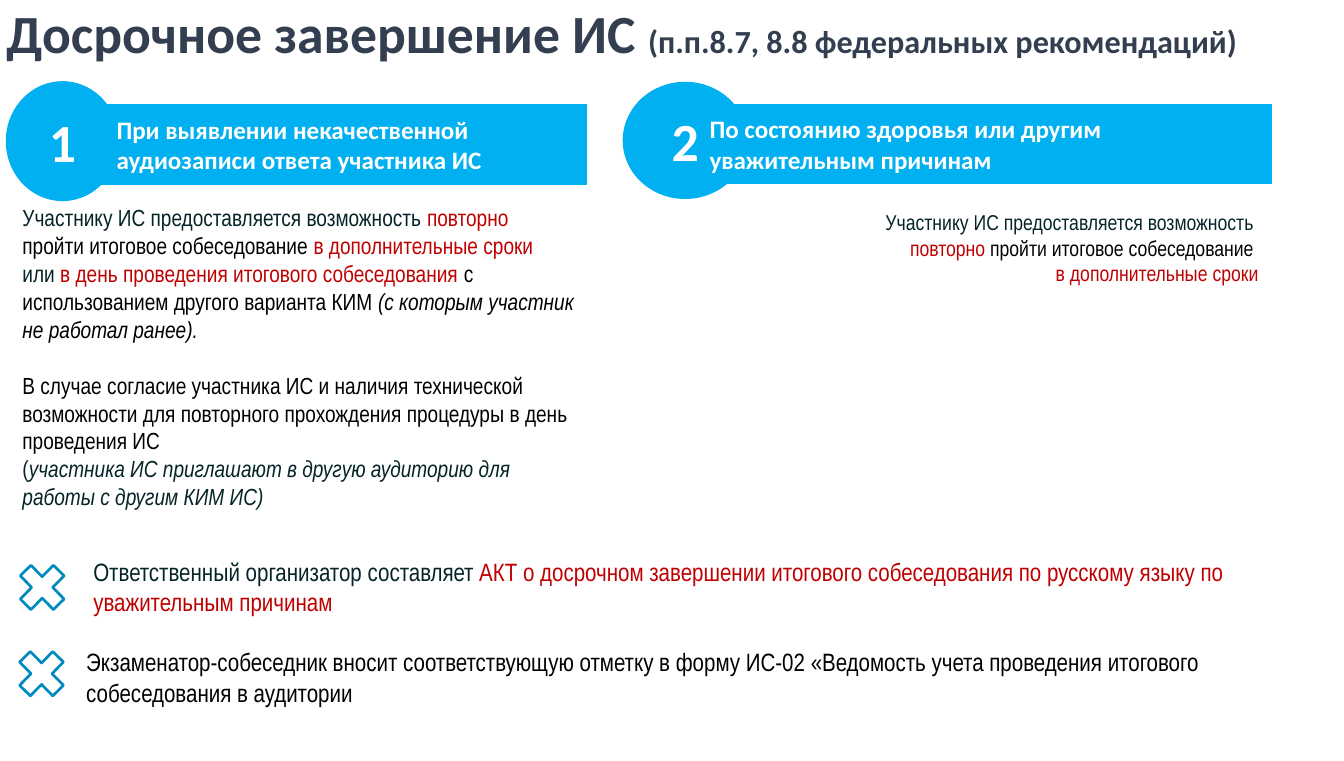
import pptx
import pptx.util
import pptx.dml.color
import pptx.enum.shapes
import pptx.enum.text

Pt = pptx.util.Pt
Kind = pptx.enum.shapes.MSO_SHAPE
Align = pptx.enum.text.PP_ALIGN
Anchor = pptx.enum.text.MSO_ANCHOR

HUES = {"sky": "00B0F0", "edge": "018ABE", "navy": "333F50", "dark": "052427",
        "black": "000000", "red": "C00000", "white": "FFFFFF"}


def tint(name):
    """Return the named colour."""
    return pptx.dml.color.RGBColor.from_string(HUES[name])


def write(shape, lines, font="Arial Narrow", size=28, hue="black", bold=False,
          align=Align.LEFT, anchor=Anchor.TOP, inset=7.2, gaps=None):
    """Fill a shape with lines, each a list of (text, overrides) runs."""
    frame = shape.text_frame
    frame.word_wrap = True
    frame.vertical_anchor = anchor
    frame.margin_left = Pt(inset)
    for i, line in enumerate(lines):
        para = frame.paragraphs[0] if i == 0 else frame.add_paragraph()
        para.alignment = align
        para.space_before = Pt((gaps or {}).get(i, 0))
        for text, form in line:
            run = para.add_run()
            run.text = text
            run.font.name = font
            run.font.size = Pt(form.get("size", size))
            run.font.bold = bold
            run.font.italic = form.get("italic", False)
            run.font.color.rgb = tint(form.get("hue", hue))


def label(slide, box, lines, **form):
    """Add a text box."""
    write(slide.shapes.add_textbox(*map(Pt, box)), lines, **form)


def draw(slide, kind, box, fill=None, line=None, width=1):
    """Add a flat preset shape."""
    shape = slide.shapes.add_shape(kind, *map(Pt, box))
    shape.shadow.inherit = False
    if fill:
        shape.fill.solid()
        shape.fill.fore_color.rgb = tint(fill)
    else:
        shape.fill.background()
    if line:
        shape.line.color.rgb = tint(line)
        shape.line.width = Pt(width)
    else:
        shape.line.fill.background()
    return shape


def banner(slide, box, disc, high, digit, lines, inset):
    """Draw a numbered disc with a heading bar running to the right."""
    left, top, width, height = box
    form = dict(font="Calibri", hue="white", bold=True, anchor=Anchor.MIDDLE)
    spot = draw(slide, Kind.OVAL, (left, top, disc, height), "sky")
    write(spot, [[(digit, {})]], size=60, align=Align.CENTER, **form)
    bar = draw(slide, Kind.RECTANGLE,
               (left + 90, top + (height - high) / 2 + 4, width - 90, high), "sky", "sky")
    write(bar, lines, inset=inset, **form)


def note(slide, box, shift, drop, runs):
    """Draw a cross with a remark beside it."""
    left, top, width, height = box
    draw(slide, Kind.MATH_MULTIPLY, (left, top, 71.3, height), line="edge", width=3)
    label(slide, (left + shift, top + drop, width - shift, 75), [runs])


def title(slide, box):
    """Write the slide heading."""
    label(slide, box, [[("Досрочное завершение ИС ", {}),
                        ("(п.п.8.7, 8.8 федеральных рекомендаций)", {"size": 36})]],
          font="Calibri", size=60, hue="navy", bold=True)


def retake(slide, box):
    """Write the text for a poor recording."""
    dark, red, tilt = {"hue": "dark"}, {"hue": "red"}, {"italic": True}
    both = dark | tilt
    label(slide, box, [
        [("Участнику ИС предоставляется возможность ", dark), ("повторно", red)],
        [("пройти итоговое собеседование ", {}), ("в дополнительные сроки", red)],
        [("или ", dark), ("в день проведения итогового собеседования ", red),
         ("с использованием другого варианта КИМ ", {}), ("(с которым участник", tilt)],
        [("не работал ранее).", tilt)],
        [("В случае согласие участника ИС и наличия технической возможности для "
          "повторного прохождения процедуры в день проведения ИС", {})],
        [("(", dark), ("участника ИС приглашают в другую аудиторию для", both)],
        [("работы с другим КИМ ИС)", both)],
    ], size=26, gaps={4: 31})


def health(slide, box):
    """Write the text for health reasons."""
    label(slide, box, [
        [("Участнику ИС предоставляется возможность ", {"hue": "dark"})],
        [("повторно ", {"hue": "red"}), ("пройти итоговое собеседование ", {})],
        [("в дополнительные сроки", {"hue": "red"})],
    ], size=24, align=Align.RIGHT)


def main():
    """Build and save the slide."""
    deck = pptx.Presentation()
    deck.slide_width, deck.slide_height = Pt(1502.6), Pt(850.3)
    slide = deck.slides.add_slide(deck.slide_layouts[6])
    title(slide, (0, -3.6, 1443, 80))
    banner(slide, (6.5, 90.7, 649.4, 134), 126.7, 89, "1",
           [[("При выявлении некачественной", {})],
            [("аудиозаписи ответа участника ИС", {})]], 33.8)
    banner(slide, (696.2, 91.4, 725.8, 131), 139.7, 89, "2",
           [[("По состоянию здоровья или другим уважительным причинам", {})]], 7.2)
    retake(slide, (18, 224, 659, 353.5))
    health(slide, (794, 229.7, 620, 94.3))
    note(slide, (11.5, 620, 1431.4, 72.7), 85.7, -1.4,
         [("Ответственный организатор составляет ", {"hue": "dark"}),
          ("АКТ о досрочном завершении итогового собеседования по русскому языку "
           "по уважительным причинам", {"hue": "red"})])
    note(slide, (10.8, 716.4, 1432.1, 72.7), 78.5, 2.9,
         [("Экзаменатор-собеседник вносит соответствующую отметку в форму ИС-02 "
           "«Ведомость учета проведения итогового собеседования в аудитории", {})])
    deck.save("out.pptx")


if __name__ == "__main__":
    main()
